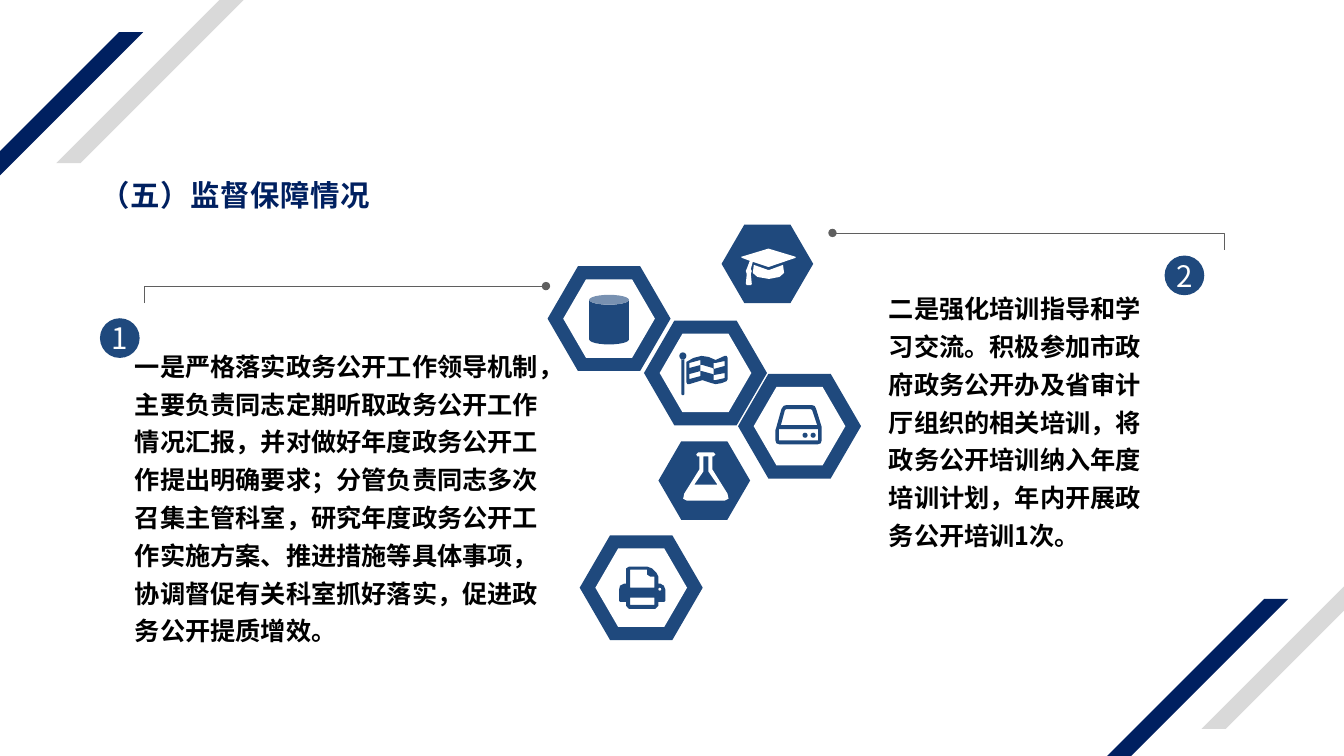
from math import cos, pi, sin

from lxml import etree
from pptx import Presentation
from pptx.dml.color import RGBColor
from pptx.enum import shapes, text
from pptx.oxml import ns
from pptx.util import Cm, Pt

NAVY = RGBColor(0x00, 0x20, 0x60)
BLUE = RGBColor(0x1F, 0x49, 0x7D)
SILVER = RGBColor(0xD9, 0xD9, 0xD9)
GRAY = RGBColor(0x5F, 0x5F, 0x5F)
BLACK = RGBColor(0, 0, 0)
WHITE = RGBColor(255, 255, 255)
FONT = "Noto Sans CJK SC"
OUTER, INNER = (3.1, 2.64), (2.31, 1.98)


def disc(x, y, r):
    """Return the points of a small circle."""
    turns = [2 * pi * i / 16 for i in range(16)]
    return [(x + r * cos(t), y + r * sin(t)) for t in turns]


FLAG = [
    [(-24, -14), (-21, -14), (-21, 21), (-22, 22), (-23, 22), (-24, 21)],
    disc(-22.5, -17, 3.5),
    [(-19, -11), (-12, -15), (-4, -17), (3, -16), (10, -13), (19, -17), (21, -17), (22, -15),
     (22, 6), (21, 8), (16, 10), (10, 11), (6, 10), (-3, 7), (-16, 11), (-18, 11), (-19, 9)],
    [(-5, -13), (-16, -10), (-16, -5), (-5, -8)],
    [(-5, -2), (-16, 1), (-16, 6), (-5, 3)],
    [(19, -12), (10, -10), (8, -10), (8, -4), (19, -7)],
    [(19, 0), (8, 2), (8, 7), (10, 7), (19, 5)],
    [(8, -4), (7, -5), (-3, -8), (-5, -8), (-5, -2), (-4, -2), (7, 1), (8, 2)],
]
FLASK = [
    [(20, 20), (-17, 20), (-21, 18), (-20, 13), (-5, -11), (-5, -24), (-7, -24), (-8, -26),
     (-6, -28), (9, -28), (11, -26), (9, -24), (8, -24), (8, -11), (23, 13), (24, 18)],
    [(-10, 4), (13, 4), (4, -9), (4, -24), (-1, -24), (-1, -9)],
]
DRIVE = [
    [(22, 14), (21, 17), (18, 18), (-20, 18), (-23, 17), (-24, 14), (-24, 4), (-23, 1),
     (-18, -17), (-16, -20), (-13, -21), (12, -21), (15, -20), (16.5, -17), (22, 1), (22, 4)],
    [(18.5, 3), (-20.5, 3), (-20.5, 14), (18.5, 14)],
    [(17.5, -1), (12.5, -16), (11, -17), (-13, -17), (-14.5, -16), (-18.5, -1)],
    disc(5.5, 9, 2.5),
    disc(13.5, 9, 2.5),
]
CAP = [
    [(28, -6), (1.5, 3), (0.5, 3), (-14.5, -2), (-16.5, 5), (-15.5, 7), (-16.5, 10),
     (-15.5, 20), (-16.5, 21), (-20.5, 21), (-21.5, 20), (-20.5, 10), (-21.5, 7), (-20.5, 5),
     (-17.5, -3), (-25.5, -6), (-26, -7), (0.5, -15), (1.5, -15), (28, -7)],
    [(16.5, 9), (12, 13), (1.5, 15), (-10, 13), (-14.5, 9), (-13.5, 1), (0.5, 6), (2, 6),
     (15.5, 1)],
]
PRINTER = [
    [(24, 13), (23, 14), (17, 14), (17, 18), (14, 21), (-12, 21), (-15, 18), (-15, 14),
     (-21, 14), (-22, 13), (-22, 2), (-21, -2), (-17, -4), (-15, -4), (-15, -19), (-12, -21),
     (6, -21), (11, -19), (15, -15), (17, -11), (17, -4), (19, -4), (22.5, -2), (24, 2)],
    [(13, 0), (13, -11), (9, -11), (6, -13), (6, -18), (-11, -18), (-11, 0)],
    [(13, 17), (13, 10), (-11, 10), (-11, 17)],
    disc(18.5, 1.5, 1.5),
]


def paint(sp, color):
    """Give a shape a plain fill without outline or shadow."""
    sp.shadow.inherit = False
    sp.fill.solid()
    sp.fill.fore_color.rgb = color
    sp.line.fill.background()


def preset(slide, kind, left, top, width, height, color):
    """Add a plain preset shape."""
    sp = slide.shapes.add_shape(kind, Cm(left), Cm(top), Cm(width), Cm(height))
    paint(sp, color)
    return sp


def write(sp, content, size, color, bold=False, align=text.PP_ALIGN.LEFT,
          anchor=text.MSO_ANCHOR.TOP):
    """Set one formatted paragraph in a shape without insets."""
    tf = sp.text_frame
    tf.margin_left = tf.margin_top = tf.margin_right = tf.margin_bottom = 0
    tf.word_wrap = True
    tf.auto_size = text.MSO_AUTO_SIZE.NONE
    tf.vertical_anchor = anchor
    p = tf.paragraphs[0]
    p.text = content
    p.alignment = align
    p.font.size, p.font.bold, p.font.name = Pt(size), bold, FONT
    p.font.color.rgb = color
    props = p._p.get_or_add_pPr().find(ns.qn("a:defRPr"))
    etree.SubElement(props, ns.qn("a:ea")).set("typeface", FONT)
    return p


def stripes(slide, left, top, dx, dy):
    """Draw a navy and a silver slanted stripe, the second offset from the first."""
    for x, y, color in ((left, top, NAVY), (left + dx, top + dy, SILVER)):
        sp = preset(slide, shapes.MSO_SHAPE.PARALLELOGRAM, x, y, 7.19, 6.58, color)
        sp.adjustments[0] = 1


def heading(slide, left, top, width, height):
    """Place the slide title."""
    sp = slide.shapes.title
    sp.left, sp.top, sp.width, sp.height = Cm(left), Cm(top), Cm(width), Cm(height)
    p = write(sp, "（五）监督保障情况", 21, NAVY, True, text.PP_ALIGN.RIGHT)
    p.line_spacing = 1
    p._p.pPr.find(ns.qn("a:defRPr")).set("spc", "40")


def bracket(slide, corner, end, top):
    """Draw a thin line from a short drop at the corner to a dot at the end."""
    builder = slide.shapes.build_freeform(Cm(corner), Cm(top + 0.43))
    builder.add_line_segments([(Cm(corner), Cm(top)), (Cm(end), Cm(top))], close=False)
    sp = builder.convert_to_shape()
    sp.shadow.inherit = False
    sp.fill.background()
    sp.line.color.rgb = GRAY
    sp.line.width = Pt(0.25)
    etree.SubElement(sp.line._get_or_add_ln(), ns.qn("a:tailEnd")).set("type", "oval")


def point(slide, number, content, left, top, width, height, dot_left, dot_top):
    """Place a paragraph with its numbered dot."""
    box = slide.shapes.add_textbox(Cm(left), Cm(top), Cm(width), Cm(height))
    write(box, content, 18, BLACK, True).line_spacing = 1.25
    dot = preset(slide, shapes.MSO_SHAPE.OVAL, dot_left, dot_top, 1, 1, BLUE)
    write(dot, number, 21.1, WHITE, align=text.PP_ALIGN.CENTER, anchor=text.MSO_ANCHOR.MIDDLE)


def icon(slide, x, y, contours, color):
    """Draw an icon from contours in hundredths of an inch around its centre."""
    scaled = [[(px * 10, py * 10) for px, py in contour] for contour in contours]
    builder = slide.shapes.build_freeform(*scaled[0][0], scale=Cm(0.00254))
    for i, contour in enumerate(scaled):
        if i:
            builder.move_to(*contour[0])
        builder.add_line_segments(contour[1:], close=True)
    paint(builder.convert_to_shape(Cm(x), Cm(y)), color)


def badge(slide, x, y, contours, framed):
    """Draw a hexagon around a centre, framed or solid, with its icon."""
    layers = [(OUTER, BLUE), (INNER, WHITE)] if framed else [(INNER, BLUE)]
    for (w, h), color in layers:
        sp = preset(slide, shapes.MSO_SHAPE.HEXAGON, x - w / 2, y - h / 2, w, h, color)
        sp.adjustments[0] = 0.29
    if contours:
        icon(slide, x, y, contours, BLUE if framed else WHITE)
    else:
        preset(slide, shapes.MSO_SHAPE.CAN, x - 0.5, y - 0.6, 1, 1.25, BLUE)


def main():
    """Build the slide and save it."""
    prs = Presentation()
    prs.slide_width, prs.slide_height = Cm(33.87), Cm(19.05)
    slide = prs.slides.add_slide(prs.slide_layouts[5])
    stripes(slide, -3.58, 0.81, 5, -3.28)
    stripes(slide, 25.28, 15.09, 5, -3.3)
    heading(slide, 1.09, 4.45, 8.23, 0.89)
    bracket(slide, 30.84, 20.98, 5.87)
    bracket(slide, 3.63, 13.76, 7.21)
    point(slide, "1", "一是严格落实政务公开工作领导机制，主要负责同志定期听取政务公开工作情况汇报，"
          "并对做好年度政务公开工作提出明确要求；分管负责同志多次召集主管科室，"
          "研究年度政务公开工作实施方案、推进措施等具体事项，"
          "协调督促有关科室抓好落实，促进政务公开提质增效。", 3.4, 8.66, 10.36, 11.53 - 1.2, 2.52, 8.02)
    point(slide, "2", "二是强化培训指导和学习交流。积极参加市政府政务公开办及省审计厅组织的相关培训，"
          "将政务公开培训纳入年度培训计划，年内开展政务公开培训1次。",
          22.4, 7.21, 6.96, 7.98, 29.35, 6.44)
    for x, y, contours, framed in (
        (17.78, 9.4, FLAG, True),
        (17.75, 12.11, FLASK, False),
        (20.15, 10.74, DRIVE, True),
        (19.34, 6.65, CAP, False),
        (16.16, 14.81, PRINTER, True),
        (15.35, 8.03, None, True),
    ):
        badge(slide, x, y, contours, framed)
    prs.save("out.pptx")


if __name__ == "__main__":
    main()
